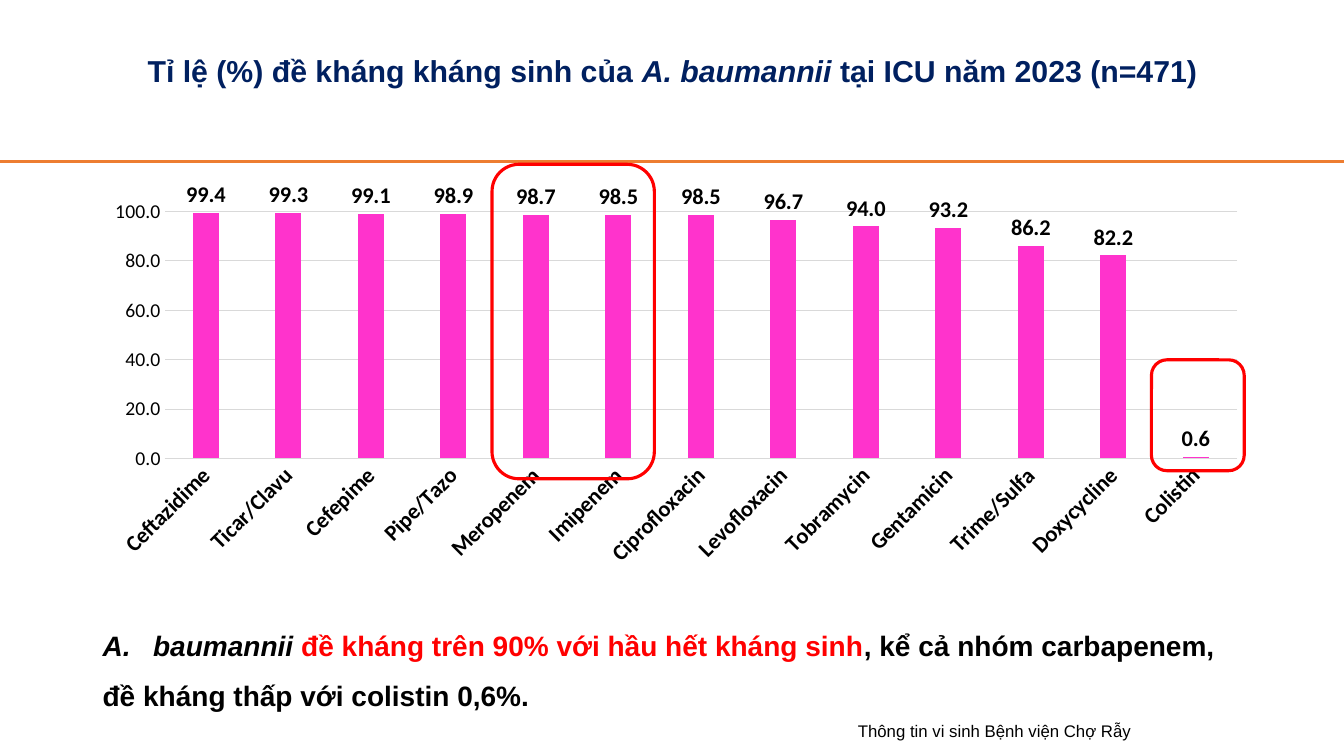
from lxml import etree
from pptx import Presentation
from pptx.chart.data import CategoryChartData
from pptx.dml.color import RGBColor
from pptx.enum.chart import XL_CHART_TYPE, XL_LABEL_POSITION, XL_TICK_MARK
from pptx.enum.shapes import MSO_CONNECTOR, MSO_SHAPE
from pptx.enum.text import MSO_ANCHOR, PP_ALIGN
from pptx.oxml import parse_xml
from pptx.oxml.ns import nsdecls, qn
from pptx.util import Inches, Pt

COLUMN = XL_CHART_TYPE.COLUMN_CLUSTERED
OUTSIDE_END = XL_LABEL_POSITION.OUTSIDE_END
NO_TICK = XL_TICK_MARK.NONE
STRAIGHT = MSO_CONNECTOR.STRAIGHT
ROUNDED = MSO_SHAPE.ROUNDED_RECTANGLE
CENTER, LEFT = PP_ALIGN.CENTER, PP_ALIGN.LEFT
TOP, MIDDLE = MSO_ANCHOR.TOP, MSO_ANCHOR.MIDDLE

NAVY, BLACK, RED = "002060", "000000", "FF0000"
PINK, ORANGE, GRAY = "FF33CC", "ED7D31", "D9D9D9"

TITLE = [[
    ("Tỉ lệ (%) đề kháng kháng sinh của ", NAVY, False),
    ("A. baumannii ", NAVY, True),
    ("tại ICU năm 2023 (n=471)", NAVY, False),
]]
CONCLUSION = [
    [
        ("baumannii ", BLACK, True),
        ("đề kháng trên 90% với hầu hết kháng sinh", RED, False),
        (", kể cả nhóm carbapenem,", BLACK, False),
    ],
    [("đề kháng thấp với colistin 0,6%.", BLACK, False)],
]
CREDIT = [[("Thông tin vi sinh Bệnh viện Chợ Rẫy", BLACK, False)]]
RESISTANCE = {
    "Ceftazidime": 99.4, "Ticar/Clavu": 99.3, "Cefepime": 99.1,
    "Pipe/Tazo": 98.9, "Meropenem": 98.7, "Imipenem": 98.5,
    "Ciprofloxacin": 98.5, "Levofloxacin": 96.7, "Tobramycin": 94,
    "Gentamicin": 93.2, "Trime/Sulfa": 86.2, "Doxycycline": 82.2,
    "Colistin": 0.6,
}
PLOT_AREA = {"x": 0.062, "y": 0.216, "w": 0.925, "h": 0.515}
HIGHLIGHTS = [(4.88, 1.63, 1.61, 3.12), (11.42, 3.57, 0.92, 1.1)]


def color(value):
    return RGBColor.from_string(value)


def set_font(font, size, bold=False, name="Calibri", fill=BLACK):
    font.name, font.size, font.bold = name, Pt(size), bold
    font.color.rgb = color(fill)


def set_line(line, fill, width):
    line.color.rgb = color(fill)
    line.width = Pt(width)


def add_text(slide, box, paragraphs, size, bold, align, spacing=1.0, anchor=TOP, numbered=False):
    frame = slide.shapes.add_textbox(*map(Inches, box)).text_frame
    frame.word_wrap = True
    frame.vertical_anchor = anchor
    for index, runs in enumerate(paragraphs):
        paragraph = frame.add_paragraph() if index else frame.paragraphs[0]
        if numbered and index == 0:
            properties = paragraph._p.get_or_add_pPr()
            properties.set("marL", str(Inches(0.5)))
            properties.set("indent", str(Inches(-0.5)))
            etree.SubElement(properties, qn("a:buFont"), typeface="+mj-lt")
            etree.SubElement(properties, qn("a:buAutoNum"), type="alphaUcPeriod")
        paragraph.alignment = align
        paragraph.line_spacing = spacing
        for text, fill, italic in runs:
            run = paragraph.add_run()
            run.text = text
            set_font(run.font, size, bold, "Arial", fill)
            run.font.italic = italic


def add_resistance_chart(slide):
    data = CategoryChartData(number_format="0.0")
    data.categories = list(RESISTANCE)
    data.add_series("Series 1", list(RESISTANCE.values()))
    box = map(Inches, (0.92, 1.07, 11.5, 4.76))
    chart = slide.shapes.add_chart(COLUMN, *box, data).chart
    chart.has_title = chart.has_legend = False
    set_font(chart.font, 10)

    plot = chart.plots[0]
    plot.gap_width, plot.overlap = 219, -27
    plot.vary_by_categories = False
    series = plot.series[0]
    series.format.fill.solid()
    series.format.fill.fore_color.rgb = color(PINK)
    labels = series.data_labels
    labels.show_value = True
    labels.position = OUTSIDE_END
    labels.number_format, labels.number_format_is_linked = "0.0", False
    set_font(labels.font, 16, True)

    categories, values = chart.category_axis, chart.value_axis
    for axis, size, bold in ((categories, 16, True), (values, 14, False)):
        axis.major_tick_mark = axis.minor_tick_mark = NO_TICK
        set_font(axis.tick_labels.font, size, bold)
    set_line(categories.format.line, GRAY, 0.75)
    body = categories._element.find(qn("c:txPr")).find(qn("a:bodyPr"))
    body.set("rot", "-2700000")
    body.set("vert", "horz")
    values.minimum_scale, values.maximum_scale, values.major_unit = 0, 100, 20
    values.tick_labels.number_format = "0.0"
    values.tick_labels.number_format_is_linked = False
    values.format.line.fill.background()
    set_line(values.major_gridlines.format.line, GRAY, 0.75)

    plot_area = chart._chartSpace.chart.plotArea
    for layout in plot_area.findall(qn("c:layout")):
        plot_area.remove(layout)
    modes = '<c:layoutTarget val="inner"/><c:xMode val="edge"/><c:yMode val="edge"/>'
    sizes = "".join(f'<c:{key} val="{value}"/>' for key, value in PLOT_AREA.items())
    plot_area.insert(0, parse_xml(
        f'<c:layout {nsdecls("c")}><c:manualLayout>{modes}{sizes}</c:manualLayout></c:layout>'))


def main():
    presentation = Presentation()
    presentation.slide_width, presentation.slide_height = Inches(13.33), Inches(7.5)
    slide = presentation.slides.add_slide(presentation.slide_layouts[6])

    rule = slide.shapes.add_connector(STRAIGHT, 0, Inches(1.6), Inches(13.33), Inches(1.6))
    set_line(rule.line, ORANGE, 2.5)
    etree.SubElement(rule._element.spPr, qn("a:effectLst"))

    add_text(slide, (0.92, 0.47, 11.5, 0.5), TITLE, 21.6, True, CENTER, 0.9, MIDDLE)
    add_resistance_chart(slide)
    add_text(slide, (0.92, 6.02, 12.23, 1.05), CONCLUSION, 20, True, LEFT, 1.5, numbered=True)
    for box in HIGHLIGHTS:
        frame = slide.shapes.add_shape(ROUNDED, *map(Inches, box))
        frame.shadow.inherit = False
        frame.fill.background()
        set_line(frame.line, RED, 2.25)
    add_text(slide, (6.4, 7.1, 6.93, 0.3), CREDIT, 12, False, CENTER)
    presentation.save("out.pptx")


if __name__ == "__main__":
    main()
